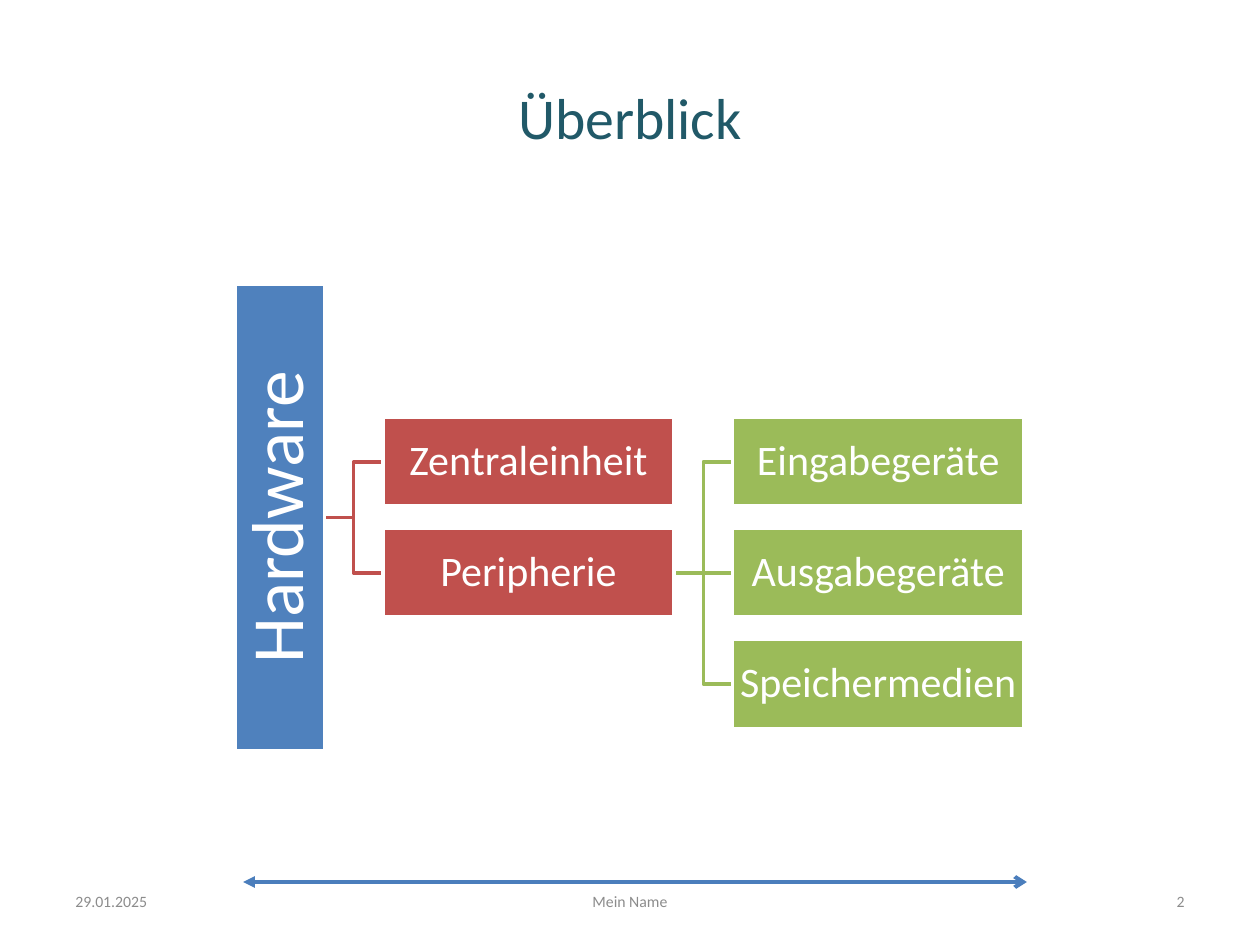
from lxml.etree import SubElement
from pptx import Presentation
from pptx.dml.color import RGBColor
from pptx.enum.shapes import MSO_CONNECTOR as Connector, MSO_SHAPE as Shape
from pptx.enum.text import MSO_ANCHOR as Anchor, PP_ALIGN as Align
from pptx.oxml.ns import qn
from pptx.util import Cm, Pt

COLORS = {
    "title": "215968",
    "root": "4F81BD",
    "group": "C0504D",
    "device": "9BBB59",
    "arrow": "4B7EBC",
    "footer": "8C8C8C",
    "white": "FFFFFF",
}
FONT = "Calibri"
NODE_WIDTH, NODE_HEIGHT = 5.87, 1.79
ROOT_LENGTH = 9.42
COLUMN_GAP, ROW_STEP = 1.18, 2.24
LEVEL_COLORS = ["root", "group", "device"]
HARDWARE = ("Hardware", [
    ("Zentraleinheit", []),
    ("Peripherie", [
        ("Eingabegeräte", []),
        ("Ausgabegeräte", []),
        ("Speichermedien", []),
    ]),
])


def color(name):
    """Return the named colour."""
    return RGBColor.from_string(COLORS[name])


def write(shape, text, size, color_name, align=Align.CENTER):
    """Set one line of formatted, vertically centred text in a shape."""
    frame = shape.text_frame
    frame.text = text
    frame.word_wrap = True
    frame.vertical_anchor = Anchor.MIDDLE
    paragraph = frame.paragraphs[0]
    paragraph.alignment = align
    font = paragraph.runs[0].font
    font.name, font.size = FONT, Pt(size)
    font.color.rgb = color(color_name)


def add_label(slide, box, text, size, color_name, align=Align.CENTER):
    """Add a text box in a box given in centimetres."""
    label = slide.shapes.add_textbox(*map(Cm, box))
    write(label, text, size, color_name, align)


def add_line(slide, start, end, color_name, width):
    """Add a straight line without shadow between two points."""
    line = slide.shapes.add_connector(Connector.STRAIGHT, *map(Cm, start + end))
    line.line.color.rgb = color(color_name)
    line.line.width = Pt(width)
    SubElement(line._element.spPr, qn("a:effectLst"))
    return line


def add_branch(slide, start, end, color_name):
    """Join a parent to a child with a line that bends halfway."""
    (left, top), (right, bottom) = start, end
    if top == bottom:
        add_line(slide, start, end, color_name, 2)
        return
    middle = (left + right) / 2
    builder = slide.shapes.build_freeform(Cm(left), Cm(top))
    corners = [(middle, top), (middle, bottom), (right, bottom)]
    builder.add_line_segments([(Cm(x), Cm(y)) for x, y in corners], close=False)
    branch = builder.convert_to_shape()
    branch.shadow.inherit = False
    branch.fill.background()
    branch.line.color.rgb = color(color_name)
    branch.line.width = Pt(2)


def add_node(slide, box, text, size, color_name, rotation=0):
    """Add one filled node of the tree."""
    node = slide.shapes.add_shape(Shape.RECTANGLE, *map(Cm, box))
    node.shadow.inherit = False
    node.rotation = rotation
    node.fill.solid()
    node.fill.fore_color.rgb = color(color_name)
    node.line.color.rgb = color("white")
    node.line.width = Pt(2)
    frame = node.text_frame
    frame.margin_left = frame.margin_right = Cm(0.05)
    frame.margin_top = frame.margin_bottom = Cm(0.05)
    write(node, text, size, "white")
    frame.paragraphs[0].line_spacing = 0.9


def add_tree(slide, left, center, tree, level=0):
    """Draw a node and its children, centred beside it, from left to right."""
    text, children = tree
    right = left + (NODE_WIDTH if level else NODE_HEIGHT)
    for index, child in enumerate(children):
        child_center = center + (index - (len(children) - 1) / 2) * ROW_STEP
        child_left = right + COLUMN_GAP
        add_branch(slide, (right, center), (child_left, child_center),
                   LEVEL_COLORS[level + 1])
        add_tree(slide, child_left, child_center, child, level + 1)
    width, size, rotation = (NODE_WIDTH, 24, 0) if level else (ROOT_LENGTH, 42, 270)
    box = ((left + right - width) / 2, center - NODE_HEIGHT / 2, width, NODE_HEIGHT)
    add_node(slide, box, text, size, LEVEL_COLORS[level], rotation)


def add_footer(slide, left, top, width, height):
    """Place date, name and page number across the footer."""
    side, middle = 5.92, 8.05
    parts = [
        (left, side, "29.01.2025", Align.LEFT),
        (left + (width - middle) / 2, middle, "Mein Name", Align.CENTER),
        (left + width - side, side, "2", Align.RIGHT),
    ]
    for part_left, part_width, text, align in parts:
        box = (part_left, top, part_width, height)
        add_label(slide, box, text, 9, "footer", align)


def add_double_arrow(slide, left, right, top):
    """Draw the horizontal arrow with a head at each end."""
    arrow = add_line(slide, (left, top), (right, top), "arrow", 2.25)
    outline = arrow.line._get_or_add_ln()
    for tag, kind in (("a:headEnd", "triangle"), ("a:tailEnd", "arrow")):
        SubElement(outline, qn(tag), type=kind)


def main():
    """Build and save the overview slide."""
    presentation = Presentation()
    presentation.slide_width, presentation.slide_height = Cm(25.4), Cm(19.05)
    slide = presentation.slides.add_slide(presentation.slide_layouts[6])
    add_label(slide, (1.27, 0.76, 22.86, 3.18), "Überblick", 33, "title")
    add_tree(slide, 4.75, 10.43, HARDWARE)
    add_footer(slide, 1.27, 17.66, 22.86, 1.01)
    add_double_arrow(slide, 4.9, 20.7, 17.78)
    presentation.save("out.pptx")


if __name__ == "__main__":
    main()
